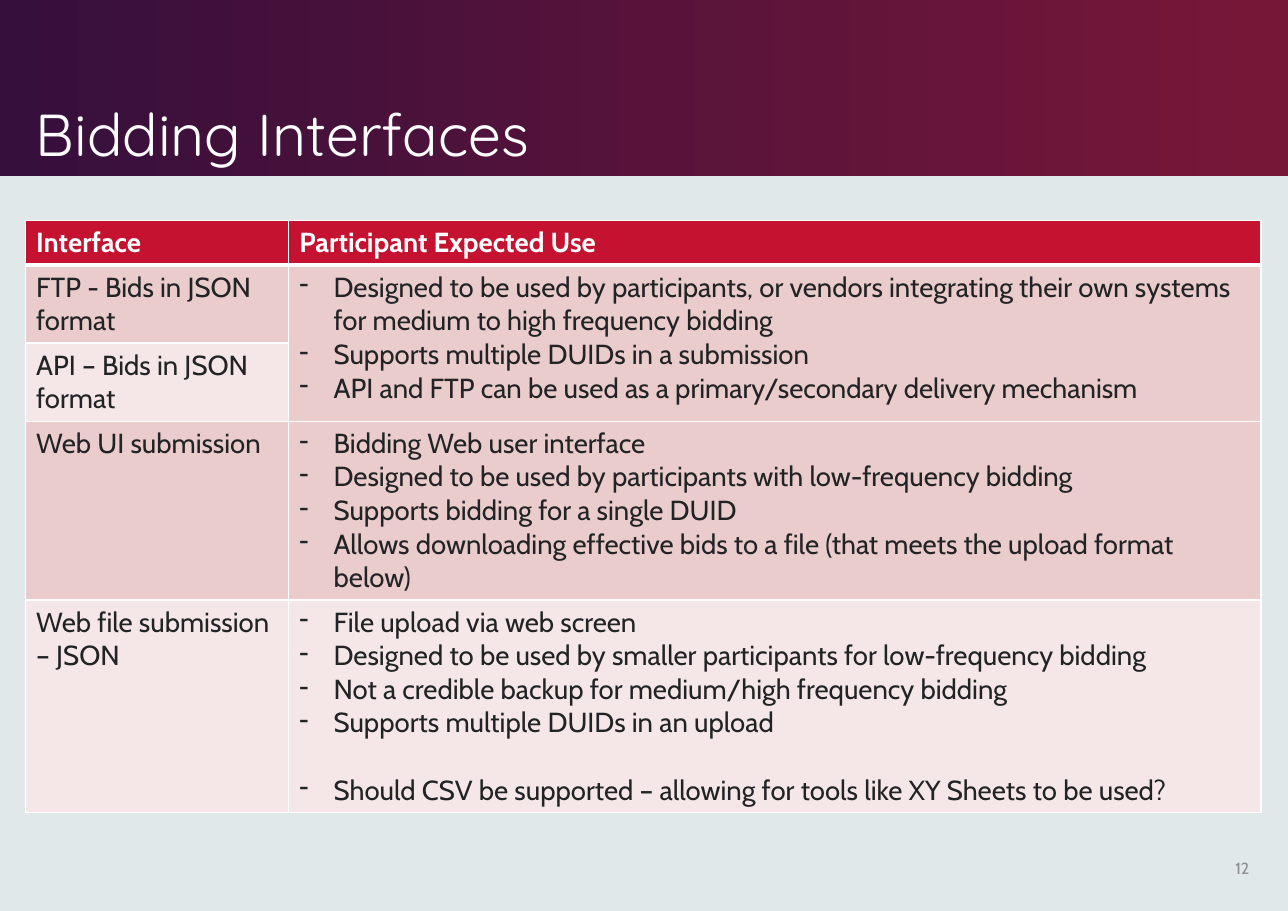
from dataclasses import dataclass

from lxml.etree import SubElement
from pptx import Presentation
from pptx.dml.color import RGBColor
from pptx.enum.shapes import MSO_SHAPE
from pptx.enum.text import MSO_ANCHOR, PP_ALIGN
from pptx.oxml.ns import qn
from pptx.util import Cm, Pt


@dataclass(frozen=True)
class Theme:
    background: str = "E0E8EA"
    band_start: str = "360F3C"
    band_end: str = "771738"
    white: str = "FFFFFF"
    header: str = "C41230"
    row_dark: str = "EACCCD"
    row_light: str = "F5E7E8"
    body: str = "222324"
    muted: str = "8D8D8E"
    title_font: str = "Quicksand"
    body_font: str = "Cabin"
    title_size: float = 38.6
    body_size: float = 18
    number_size: float = 10.5
    paragraph_gap: float = 22
    border: float = 1
    header_border: float = 3


@dataclass(frozen=True)
class Box:
    left: float
    top: float
    width: float
    height: float

    def lengths(self):
        return Cm(self.left), Cm(self.top), Cm(self.width), Cm(self.height)


THEME = Theme()
HEADINGS = ["Interface", "Participant Expected Use"]
INTERFACES = [
    ("FTP - Bids in JSON format", THEME.row_dark, [
        "Designed to be used by participants, or vendors integrating their own systems "
        "for medium to high frequency bidding",
        "Supports multiple DUIDs in a submission",
        "API and FTP can be used as a primary/secondary delivery mechanism",
    ]),
    ("API – Bids in JSON format", THEME.row_light, []),
    ("Web UI submission", THEME.row_dark, [
        "Bidding Web user interface",
        "Designed to be used by participants with low-frequency bidding",
        "Supports bidding for a single DUID",
        "Allows downloading effective bids to a file (that meets the upload format below)",
    ]),
    ("Web file submission – JSON", THEME.row_light, [
        "File upload via web screen",
        "Designed to be used by smaller participants for low-frequency bidding",
        "Not a credible backup for medium/high frequency bidding",
        "Supports multiple DUIDs in an upload",
        "Should CSV be supported – allowing for tools like XY Sheets to be used?",
    ]),
]
OPEN_QUESTION = INTERFACES[-1][2][-1]
COLUMN_WIDTHS = [6.07, 22.43]
ROW_HEIGHTS = [1.03, 1.8, 1.8, 4.12, 4.9]


def color(value):
    return RGBColor.from_string(value)


def format_runs(paragraph, font_name, size, font_color, bold=False):
    for run in paragraph.runs:
        run.font.name = font_name
        run.font.size = Pt(size)
        run.font.bold = bold
        run.font.color.rgb = color(font_color)


def add_label(slide, box, text, anchor, font_name, size, font_color):
    text_frame = slide.shapes.add_textbox(*box.lengths()).text_frame
    text_frame.word_wrap = True
    text_frame.vertical_anchor = anchor
    text_frame.text = text
    paragraph = text_frame.paragraphs[0]
    format_runs(paragraph, font_name, size, font_color)
    return paragraph


def add_title_band(slide, box, title):
    band = slide.shapes.add_shape(MSO_SHAPE.RECTANGLE, *box.lengths())
    band.shadow.inherit = False
    band.line.fill.background()
    band.fill.gradient()
    band.fill.gradient_angle = 0
    stops = [(0, THEME.band_start), (0.99, THEME.band_end)]
    for stop, (position, stop_color) in zip(band.fill.gradient_stops, stops):
        stop.position = position
        stop.color.rgb = color(stop_color)
    title_box = Box(box.left + 0.58, box.top + 0.4, box.width - 2.3, box.height - 0.42)
    paragraph = add_label(slide, title_box, title, MSO_ANCHOR.BOTTOM,
                          THEME.title_font, THEME.title_size, THEME.white)
    paragraph.line_spacing = 0.9


def add_dash(paragraph):
    properties = paragraph._p.get_or_add_pPr()
    properties.set("marL", str(Cm(0.79)))
    properties.set("indent", str(Cm(-0.79)))
    SubElement(properties, qn("a:buChar"), char="-")


def style_cell(cell, fill, top_width, bottom_width):
    properties = cell._tc.get_or_add_tcPr()
    widths = {"L": THEME.border, "R": THEME.border, "T": top_width, "B": bottom_width}
    for side, width in widths.items():
        line = SubElement(properties, qn(f"a:ln{side}"), w=str(Pt(width)))
        SubElement(SubElement(line, qn("a:solidFill")), qn("a:srgbClr"), val=THEME.white)
    cell.fill.solid()
    cell.fill.fore_color.rgb = color(fill)


def fill_cell(cell, lines, font_color, bold=False, dashed=False):
    cell.text_frame.text = "\n".join(lines)
    for paragraph in cell.text_frame.paragraphs:
        if dashed:
            add_dash(paragraph)
        if paragraph.text == OPEN_QUESTION:
            paragraph.space_before = Pt(THEME.paragraph_gap)
        format_runs(paragraph, THEME.body_font, THEME.body_size, font_color, bold)


def add_interface_table(slide, box):
    frame = slide.shapes.add_table(len(ROW_HEIGHTS), len(COLUMN_WIDTHS), *box.lengths())
    table = frame.table
    table.horz_banding = False
    for column, width in zip(table.columns, COLUMN_WIDTHS):
        column.width = Cm(width)
    for row, height in zip(table.rows, ROW_HEIGHTS):
        row.height = Cm(height)
    for cell, heading in zip(table.rows[0].cells, HEADINGS):
        style_cell(cell, THEME.header, THEME.border, THEME.header_border)
        fill_cell(cell, [heading], THEME.white, bold=True)
    for index, (interface, fill, uses) in enumerate(INTERFACES, start=1):
        top_width = THEME.header_border if index == 1 else THEME.border
        interface_cell, use_cell = table.rows[index].cells
        for cell in (interface_cell, use_cell):
            style_cell(cell, fill, top_width, THEME.border)
        fill_cell(interface_cell, [interface], THEME.body)
        if uses:
            fill_cell(use_cell, uses, THEME.body, dashed=True)
        else:
            table.cell(index - 1, 1).merge(use_cell)


def add_slide_number(slide, box, number):
    paragraph = add_label(slide, box, number, MSO_ANCHOR.MIDDLE,
                          THEME.body_font, THEME.number_size, THEME.muted)
    paragraph.alignment = PP_ALIGN.RIGHT


def main():
    presentation = Presentation()
    presentation.slide_width = Cm(29.7)
    presentation.slide_height = Cm(21)
    slide = presentation.slides.add_slide(presentation.slide_layouts[6])
    slide.background.fill.solid()
    slide.background.fill.fore_color.rgb = color(THEME.background)
    add_title_band(slide, Box(0, 0, 29.7, 4.06), "Bidding Interfaces")
    add_interface_table(slide, Box(0.58, 5.08, sum(COLUMN_WIDTHS), sum(ROW_HEIGHTS)))
    add_slide_number(slide, Box(27.66, 19.46, 1.4, 1.12), "12")
    presentation.save("out.pptx")


if __name__ == "__main__":
    main()
